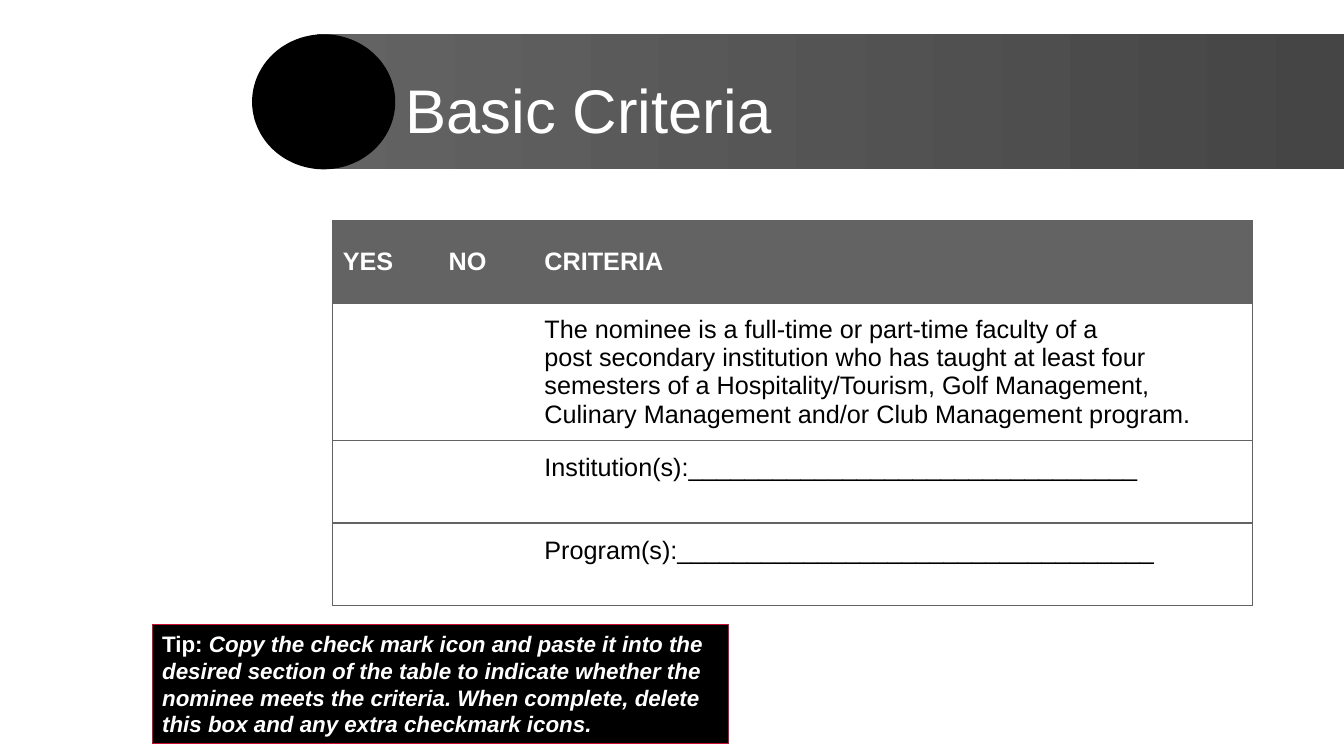
"""Build the Basic Criteria slide."""
from dataclasses import dataclass

from pptx import Presentation
from pptx.dml.color import RGBColor
from pptx.enum import shapes, text
from pptx.oxml import parse_xml
from pptx.oxml import ns
from pptx.util import Inches, Pt


@dataclass(frozen=True)
class Theme:
    """Hold the colours, font and type sizes."""
    font: str = "Arial"
    white: str = "FFFFFF"
    black: str = "000000"
    gray: str = "646363"
    dark: str = "464545"
    red: str = "C8102E"
    title: int = 44
    body: int = 18
    tip: int = 16


THEME = Theme()
COLS = (1.05, 0.95, 7.12)
ROWS = (0.82, 1.36, 0.82, 0.82)
CELLS = (
    ("YES", "NO", "CRITERIA"),
    ("", "", "The nominee is a full-time or part-time faculty of a\n"
     "post secondary institution who has taught at least four semesters "
     "of a Hospitality/Tourism, Golf Management, Culinary Management "
     "and/or Club Management program."),
    ("", "", "Institution(s):" + "_" * 32),
    ("", "", "Program(s):" + "_" * 34),
)
TIP = ("Copy the check mark icon and paste it into the desired section of "
       "the table to indicate whether the nominee meets the criteria. When "
       "complete, delete this box and any extra checkmark icons.")


def rgb(code):
    """Turn a hex code into a colour."""
    return RGBColor.from_string(code)


def style(para, size, color, bold=False):
    """Set the font of a paragraph."""
    font = para.font
    font.name, font.size, font.bold = THEME.font, Pt(size), bold
    font.color.rgb = rgb(color)


def add_shape(slide, kind, box, fill, line=None):
    """Add a flat preset shape."""
    shape = slide.shapes.add_shape(kind, *map(Inches, box))
    shape.shadow.inherit = False
    shape.fill.solid()
    shape.fill.fore_color.rgb = rgb(fill)
    if line:
        shape.line.color.rgb = rgb(line)
        shape.line.width = Pt(0.75)
    else:
        shape.line.fill.background()
    return shape


def add_band(slide):
    """Draw the shaded title band and its disc."""
    band = add_shape(slide, shapes.MSO_SHAPE.RECTANGLE,
                     (3.14, 0.34, 10.19, 1.34), THEME.gray)
    band.fill.gradient()
    band.fill.gradient_angle = 0
    for stop, code in zip(band.fill.gradient_stops, (THEME.gray, THEME.dark)):
        stop.color.rgb = rgb(code)
    add_shape(slide, shapes.MSO_SHAPE.OVAL, (2.5, 0.34, 1.42, 1.34),
              THEME.black)


def set_title(slide, words):
    """Place the title in front of the band."""
    title = slide.shapes.title
    title.left, title.top = Inches(3.92), Inches(0.4)
    title.width, title.height = Inches(8.5), Inches(1.45)
    title.element.getparent().append(title.element)
    frame = title.text_frame
    frame.text = words
    frame.vertical_anchor = text.MSO_ANCHOR.MIDDLE
    para = frame.paragraphs[0]
    para.alignment, para.line_spacing = text.PP_ALIGN.LEFT, 0.9
    style(para, THEME.title, THEME.white)


def set_edges(cell, sides):
    """Rule the named sides of a cell and clear the others."""
    props = cell._tc.get_or_add_tcPr()
    for side in "LRTB":
        fill = "<a:noFill/>"
        if side in sides:
            fill = (f'<a:solidFill><a:srgbClr val="{THEME.gray}"/>'
                    "</a:solidFill>")
        props.append(parse_xml(
            f'<a:ln{side} {ns.nsdecls("a")} w="12700">{fill}</a:ln{side}>'))


def fill_cell(cell, words, row, col):
    """Write and format one table cell."""
    head = row == 0
    side = {0: "L", len(COLS) - 1: "R"}.get(col, "")
    set_edges(cell, "TB" + side)
    if head:
        cell.fill.solid()
        cell.fill.fore_color.rgb = rgb(THEME.gray)
    else:
        cell.fill.background()
    cell.text = words
    cell.vertical_anchor = text.MSO_ANCHOR.MIDDLE
    if row > 1:
        cell.vertical_anchor = text.MSO_ANCHOR.TOP
        cell.margin_top = Inches(0.13)
    for para in cell.text_frame.paragraphs:
        style(para, THEME.body, THEME.white if head else THEME.black, head)


def add_grid(slide):
    """Add the criteria table."""
    box = map(Inches, (3.3, 2.19, sum(COLS), sum(ROWS)))
    table = slide.shapes.add_table(len(ROWS), len(COLS), *box).table
    table.horz_banding = False
    for col, width in zip(table.columns, COLS):
        col.width = Inches(width)
    for row, height in zip(table.rows, ROWS):
        row.height = Inches(height)
    for r, line in enumerate(CELLS):
        for c, words in enumerate(line):
            fill_cell(table.cell(r, c), words, r, c)


def add_tip(slide):
    """Add the tip box."""
    shape = add_shape(slide, shapes.MSO_SHAPE.RECTANGLE,
                      (1.51, 6.2, 5.72, 1.18), THEME.black, THEME.red)
    frame = shape.text_frame
    frame.word_wrap = True
    frame.vertical_anchor = text.MSO_ANCHOR.TOP
    para = frame.paragraphs[0]
    para.alignment = text.PP_ALIGN.LEFT
    style(para, THEME.tip, THEME.white, True)
    para.add_run().text = "Tip: "
    run = para.add_run()
    run.text = TIP
    run.font.italic = True


def main():
    """Build and save the slide."""
    deck = Presentation()
    deck.slide_width, deck.slide_height = Inches(13.33), Inches(7.5)
    slide = deck.slides.add_slide(deck.slide_layouts[5])
    add_band(slide)
    set_title(slide, "Basic Criteria")
    add_grid(slide)
    add_tip(slide)
    deck.save("out.pptx")


if __name__ == "__main__":
    main()
